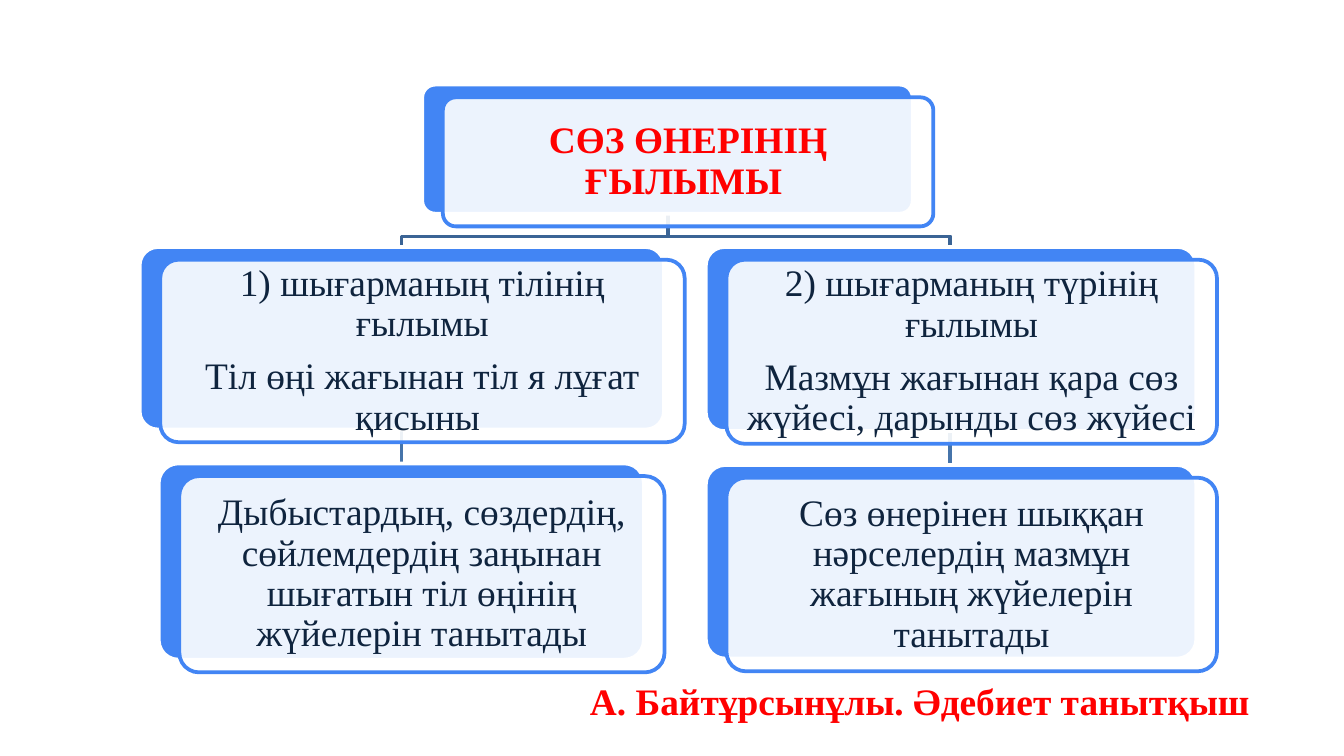
from dataclasses import dataclass
from lxml.etree import SubElement
from pptx import Presentation
from pptx.dml.color import RGBColor
from pptx.enum.shapes import MSO_CONNECTOR as Connector, MSO_SHAPE as Shape
from pptx.enum.text import MSO_ANCHOR as Anchor, MSO_AUTO_SIZE as AutoSize, PP_ALIGN as Align
from pptx.oxml.ns import qn
from pptx.util import Cm, Pt


@dataclass(frozen=True)
class Theme:
    accent: RGBColor = RGBColor.from_string("4285F4")
    paper: RGBColor = RGBColor.from_string("FFFFFF")
    body: RGBColor = RGBColor.from_string("0F243E")
    highlight: RGBColor = RGBColor.from_string("FF0000")
    branch: RGBColor = RGBColor.from_string("3B6495")
    stem: RGBColor = RGBColor.from_string("4674AA")
    font: str = "Times New Roman"
    size: Pt = Pt(20)
    line: Pt = Pt(2)


theme = Theme()


def write(shape, lines, color, bold=False, **paragraph_format):
    frame = shape.text_frame
    frame.text = "\n".join(lines)
    for index, paragraph in enumerate(frame.paragraphs):
        paragraph.space_before = Pt(7 if index else 0)
        for name, value in paragraph_format.items():
            setattr(paragraph, name, value)
        font = paragraph.runs[0].font
        for name, value in {"name": theme.font, "size": theme.size, "bold": bold}.items():
            setattr(font, name, value)
        font.color.rgb = color


def add_card(left, top, width, height, fill, line):
    card = shapes.add_shape(Shape.ROUNDED_RECTANGLE, Cm(left), Cm(top), Cm(width), Cm(height))
    card.adjustments[0] = 0.1
    card.shadow.inherit = False
    card.fill.solid()
    card.fill.fore_color.rgb = fill
    card.line.color.rgb = line
    card.line.width = theme.line
    return card


presentation = Presentation()
presentation.slide_width, presentation.slide_height = Cm(25.4), Cm(14.29)
slide = presentation.slides.add_slide(presentation.slide_layouts[5])
shapes = slide.shapes
title = shapes.title

root_x, root_bottom, bend_y, branch_bottom = 12.62, 4.04, 4.47, 4.67
for column_x, stem_top, stem_bottom in [(7.59, 8.13, 8.76), (17.96, 8.15, 8.79)]:
    stem = shapes.add_connector(
        Connector.STRAIGHT, Cm(column_x), Cm(stem_top), Cm(column_x), Cm(stem_bottom))
    SubElement(stem._element.spPr, qn("a:effectLst"))
    builder = shapes.build_freeform(Cm(root_x), Cm(root_bottom))
    corners = [(root_x, bend_y), (column_x, bend_y), (column_x, branch_bottom)]
    builder.add_line_segments([(Cm(x), Cm(y)) for x, y in corners], close=False)
    branch = builder.convert_to_shape()
    branch.shadow.inherit = False
    branch.fill.background()
    for link, color in [(stem, theme.stem), (branch, theme.branch)]:
        link.line.color.rgb = color
        link.line.width = theme.line

offset_x, offset_y = 0.39, 0.24
text_format = {
    "word_wrap": True, "auto_size": AutoSize.NONE, "vertical_anchor": Anchor.MIDDLE,
    "margin_left": Cm(0.25), "margin_right": Cm(0.25),
    "margin_top": Cm(0.2), "margin_bottom": Cm(0.2),
}
cards = [
    (7.98, 1.6, 9.27, 2.44, ["СӨЗ ӨНЕРІНІҢ ҒЫЛЫМЫ "]),
    (2.64, 4.67, 9.91, 3.45,
     ["1) шығарманың тілінің ғылымы", "Тіл өңі жағынан тіл я лұғат қисыны "]),
    (3, 8.76, 9.17, 3.71,
     ["Дыбыстардың, сөздердің, сөйлемдердің заңынан шығатын тіл өңінің жүйелерін танытады"]),
    (13.34, 4.67, 9.27, 3.48,
     ["2) шығарманың түрінің ғылымы", "Мазмұн жағынан қара сөз жүйесі, дарынды сөз жүйесі"]),
    (13.34, 8.79, 9.27, 3.66,
     ["Сөз өнерінен шыққан нәрселердің мазмұн жағының жүйелерін танытады"]),
]
for index, (left, top, width, height, lines) in enumerate(cards):
    add_card(left, top, width, height, theme.accent, theme.paper)
    front = add_card(left + offset_x, top + offset_y, width, height, theme.paper, theme.accent)
    paper = front.fill._xPr.find(qn("a:solidFill"))[0]
    SubElement(paper, qn("a:alpha"), val="90000")
    holder = front
    if index == 0:
        holder = title
        for side in ("left", "top", "width", "height"):
            setattr(title, side, getattr(front, side))
        shapes._spTree.append(title._element)
    for name, value in text_format.items():
        setattr(holder.text_frame, name, value)
    color = theme.highlight if holder is title else theme.body
    write(holder, lines, color, holder is title, alignment=Align.CENTER, line_spacing=0.9)

caption = shapes.add_textbox(Cm(10.9), Cm(12.7), Cm(13.1), Cm(1.12))
caption.text_frame.word_wrap = True
write(caption, ["А. Байтұрсынұлы. Әдебиет танытқыш"], theme.highlight, True)

presentation.save("out.pptx")
